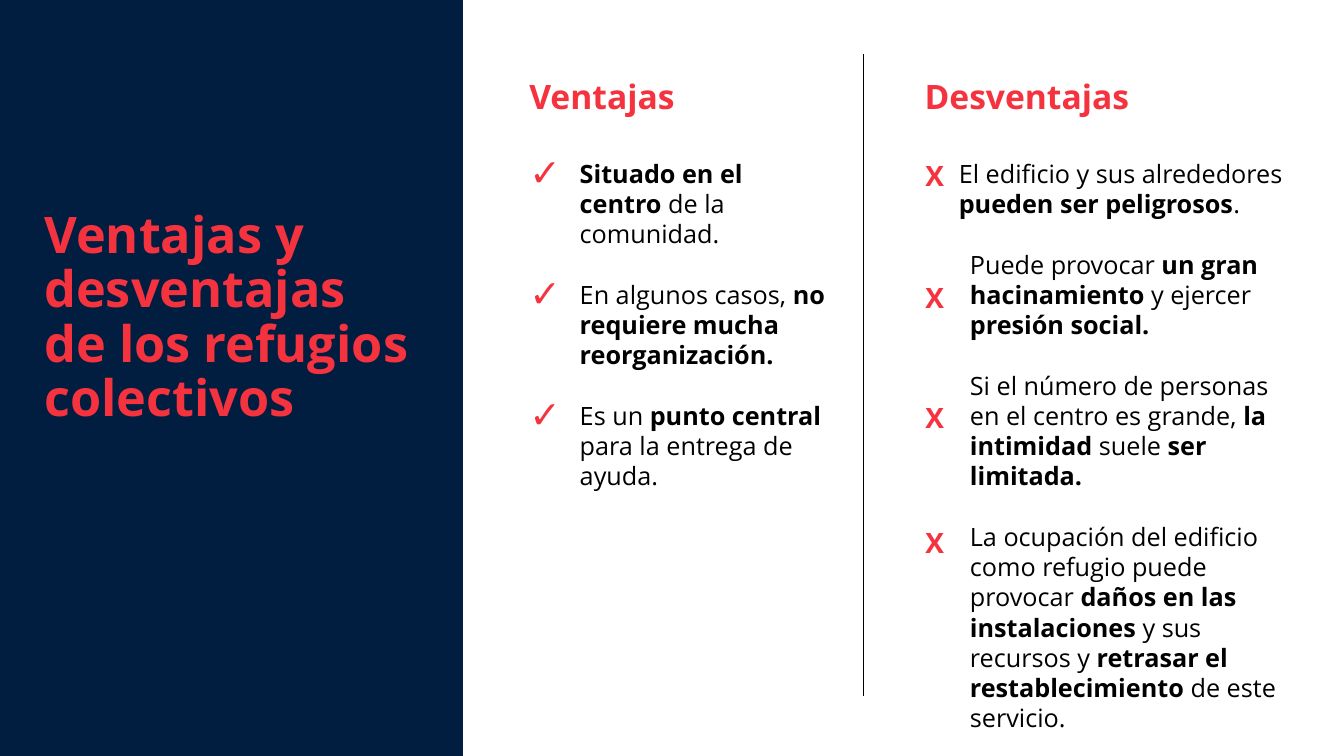
from lxml.etree import SubElement
from pptx import Presentation
from pptx.dml.color import RGBColor
from pptx.enum.shapes import MSO_CONNECTOR, MSO_SHAPE
from pptx.enum.text import MSO_ANCHOR, MSO_AUTO_SIZE, PP_ALIGN
from pptx.oxml.ns import qn
from pptx.util import Inches, Pt

COLORS = {"navy": "011E41", "red": "F5333F", "black": "000000"}
FONT = "Open Sans"
ADVANTAGES = [
    "**Situado en el centro **de la comunidad.",
    "En algunos casos, **no requiere mucha reorganización.**",
    "Es un **punto central **para la entrega de ayuda.",
]
DISADVANTAGES = [
    "El edificio y sus alrededores **pueden ser peligrosos**.",
    "Puede provocar **un gran hacinamiento **y ejercer **presión social.**",
    "Si el número de personas en el centro es grande, **la intimidad **suele **ser limitada.**",
    "La ocupación del edificio como refugio puede provocar **daños en las instalaciones **"
    "y sus recursos y **retrasar el restablecimiento **de este servicio.",
]
CROSS_OFFSETS = [0, 1.21, 2.4, 3.64]


def color(name):
    return RGBColor.from_string(COLORS[name])


def place(part, left, top, width, height, anchor=MSO_ANCHOR.TOP):
    part.left, part.top = Inches(left), Inches(top)
    part.width, part.height = Inches(width), Inches(height)
    frame = part.text_frame
    frame.word_wrap = True
    frame.auto_size = MSO_AUTO_SIZE.NONE
    frame.vertical_anchor = anchor
    frame.margin_left = frame.margin_right = Inches(0.1)
    frame.margin_top = frame.margin_bottom = Inches(0.05)
    return frame


def style(paragraph, size, tint, bold=None):
    paragraph.alignment = PP_ALIGN.LEFT
    font = paragraph.font
    font.name, font.size, font.bold = FONT, Pt(size), bold
    font.color.rgb = color(tint)


def set_bullet(paragraph, left, hanging, mark=None):
    properties = paragraph._p.get_or_add_pPr()
    properties.set("marL", str(Inches(left)))
    properties.set("indent", str(-Inches(hanging)))
    if mark:
        tint = SubElement(properties, qn("a:buClr"))
        SubElement(tint, qn("a:srgbClr"), val=COLORS["red"])
        SubElement(properties, qn("a:buSzPct"), val="150000")
        SubElement(properties, qn("a:buChar"), char=mark)
    else:
        SubElement(properties, qn("a:buNone"))


def add_title_panel(slide, left, top, width, height):
    panel = slide.shapes.add_shape(
        MSO_SHAPE.RECTANGLE, Inches(left), Inches(top), Inches(width), Inches(height))
    panel.shadow.inherit = False
    panel.fill.solid()
    panel.fill.fore_color.rgb = color("navy")
    panel.line.fill.background()
    panel.element.getparent().insert(2, panel.element)
    title = place(slide.shapes.title, left + 0.34, top + 0.7, 3.93, 4.92, MSO_ANCHOR.MIDDLE)
    title.text = "Ventajas y desventajas de los refugios\ncolectivos"
    for paragraph in title.paragraphs:
        paragraph.line_spacing = 0.9
        style(paragraph, 36, "red", True)


def add_heading(placeholder, text, left, top, width):
    heading = place(placeholder, left, top, width, 0.5).paragraphs[0]
    heading.text = text
    heading.space_before = Pt(0)
    set_bullet(heading, 0, 0)
    style(heading, 24, "red", True)


def add_points(placeholder, points, box, indents, hanging=0, mark=None):
    frame = place(placeholder, *box)
    for index, (point, indent) in enumerate(zip(points, indents)):
        paragraph = frame.paragraphs[0] if index == 0 else frame.add_paragraph()
        paragraph.space_before = Pt(21.6 if index else 0)
        set_bullet(paragraph, indent, hanging, mark)
        style(paragraph, 18, "black")
        for part, words in enumerate(point.split("**")):
            if words:
                run = paragraph.add_run()
                run.text = words
                run.font.bold = part % 2 == 1


def add_advantages(slide, left, top):
    heading, points = slide.placeholders[1], slide.placeholders[2]
    add_heading(heading, "Ventajas", left, top, 2.26)
    add_points(points, ADVANTAGES, (left, top + 0.82, 3.19, 3.43), [0.5] * 3, 0.5, "✓")


def add_disadvantages(slide, left, top):
    heading, points = slide.placeholders[3], slide.placeholders[4]
    add_heading(heading, "Desventajas", left, top, 2.8)
    add_points(points, DISADVANTAGES, (left + 0.34, top + 0.82, 3.58, 5.25),
               [0, 0.11, 0.11, 0.11])
    for offset in CROSS_OFFSETS:
        box = (left + 0.01, top + 0.82 + offset, 0.6, 0.44)
        cross = place(slide.shapes.add_textbox(0, 0, 0, 0), *box).paragraphs[0]
        cross.text = "X"
        style(cross, 20, "red", True)


def add_divider(slide, left, top, height):
    divider = slide.shapes.add_connector(
        MSO_CONNECTOR.STRAIGHT, Inches(left), Inches(top), Inches(left), Inches(top + height))
    divider.line.color.rgb = color("black")
    divider.line.width = Pt(0.75)
    SubElement(divider.element.spPr, qn("a:effectLst"))


def main():
    deck = Presentation()
    deck.slide_width, deck.slide_height = Inches(13.33), Inches(7.5)
    slide = deck.slides.add_slide(deck.slide_layouts.get_by_name("Comparison"))
    add_title_panel(slide, 0, 0, 4.59, 7.5)
    add_advantages(slide, 5.15, 0.7)
    add_disadvantages(slide, 9.07, 0.7)
    add_divider(slide, 8.56, 0.54, 6.36)
    deck.save("out.pptx")


if __name__ == "__main__":
    main()
